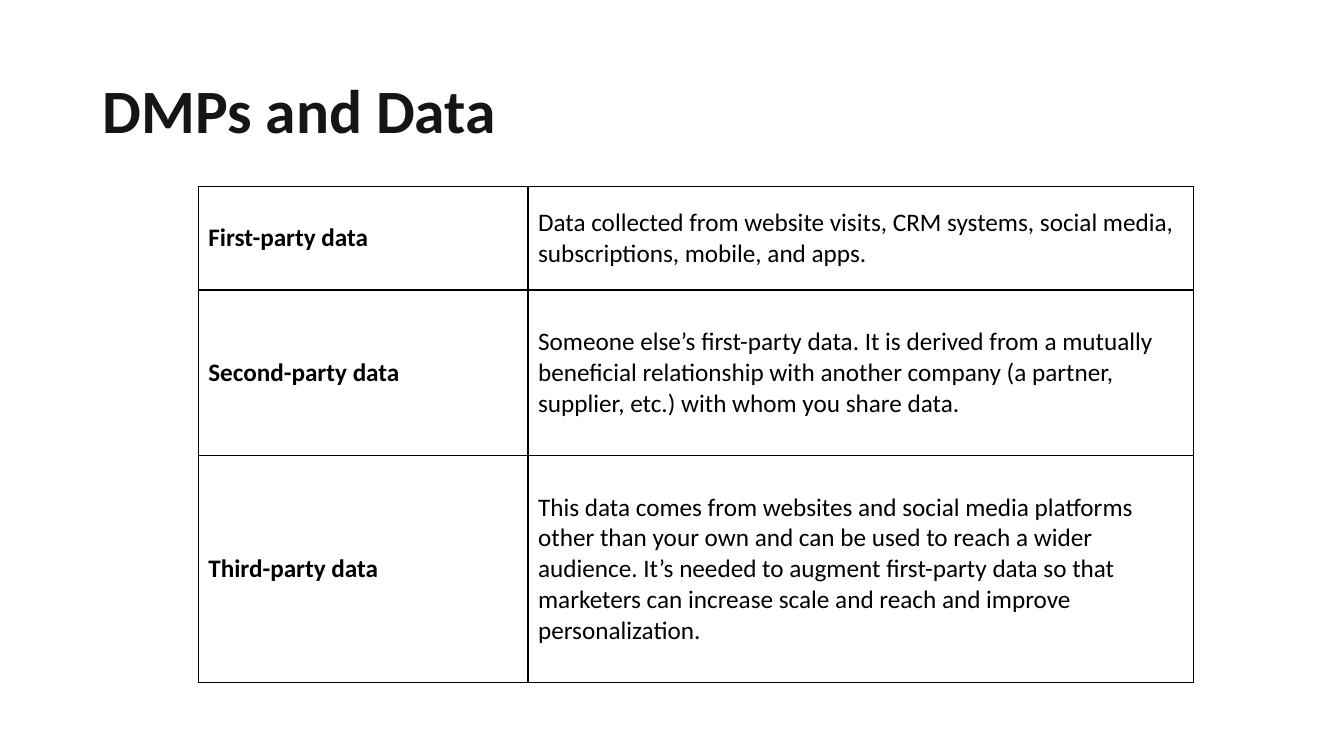
from dataclasses import dataclass

from lxml.etree import SubElement
from pptx import Presentation
from pptx.dml.color import RGBColor
from pptx.enum.text import MSO_ANCHOR as Anchor
from pptx.oxml.ns import qn
from pptx.slide import Slide
from pptx.table import _Cell as Cell
from pptx.text.text import _Paragraph as Paragraph
from pptx.util import Pt


@dataclass(frozen=True)
class Theme:
    font: str = "Calibri"
    title_color: str = "161513"
    body_color: str = "000000"
    border_color: str = "000000"
    title_size: float = 44
    body_size: float = 18
    border_width: float = 1


@dataclass(frozen=True)
class DataKind:
    name: str
    meaning: str
    height: float


THEME = Theme()
PAGE_SIZE = (960, 540)
TITLE_BOX = (66.24, 28.8, 828, 104.4)
TABLE_ORIGIN = (141.6, 133.2)
COLUMN_WIDTHS = (235.6, 475.2)
DATA_KINDS = (
    DataKind(
        "First-party data",
        "Data collected from website visits, CRM systems, social media, "
        "subscriptions, mobile, and apps.",
        74,
    ),
    DataKind(
        "Second-party data",
        "Someone else’s first-party data. It is derived from a mutually beneficial "
        "relationship with another company (a partner, supplier, etc.) with whom "
        "you share data.",
        118,
    ),
    DataKind(
        "Third-party data",
        "This data comes from websites and social media platforms other than your "
        "own and can be used to reach a wider audience. It’s needed to augment "
        "first-party data so that marketers can increase scale and reach and "
        "improve personalization.",
        162.6,
    ),
)


def write(para: Paragraph, text: str, size: float, color: str, bold: bool) -> None:
    para.text = text
    para.font.name = THEME.font
    para.font.size = Pt(size)
    para.font.bold = bold
    para.font.color.rgb = RGBColor.from_string(color)


def add_borders(cell: Cell) -> None:
    properties = cell._tc.get_or_add_tcPr()
    for side in ("lnL", "lnR", "lnT", "lnB"):
        line = SubElement(properties, qn(f"a:{side}"), w=str(Pt(THEME.border_width)))
        fill = SubElement(line, qn("a:solidFill"))
        SubElement(fill, qn("a:srgbClr"), val=THEME.border_color)


def fill_cell(cell: Cell, text: str, bold: bool) -> None:
    add_borders(cell)
    cell.fill.background()
    cell.vertical_anchor = Anchor.MIDDLE
    write(cell.text_frame.paragraphs[0], text, THEME.body_size, THEME.body_color, bold)


def add_title(page: Slide, text: str) -> None:
    box = page.shapes.add_textbox(*map(Pt, TITLE_BOX))
    box.text_frame.word_wrap = True
    box.text_frame.vertical_anchor = Anchor.MIDDLE
    para = box.text_frame.paragraphs[0]
    para.line_spacing = 0.9
    write(para, text, THEME.title_size, THEME.title_color, True)


def add_data_table(page: Slide, kinds: tuple[DataKind, ...]) -> None:
    size = (sum(COLUMN_WIDTHS), sum(kind.height for kind in kinds))
    table = page.shapes.add_table(
        len(kinds), len(COLUMN_WIDTHS), *map(Pt, TABLE_ORIGIN + size)
    ).table
    table.first_row = False
    table.horz_banding = False
    for column, width in zip(table.columns, COLUMN_WIDTHS):
        column.width = Pt(width)
    for row, kind in zip(table.rows, kinds):
        row.height = Pt(kind.height)
        fill_cell(row.cells[0], kind.name, True)
        fill_cell(row.cells[1], kind.meaning, False)


def main() -> None:
    deck = Presentation()
    deck.slide_width, deck.slide_height = map(Pt, PAGE_SIZE)
    page = deck.slides.add_slide(deck.slide_layouts[6])
    add_title(page, "DMPs and Data")
    add_data_table(page, DATA_KINDS)
    deck.save("out.pptx")


if __name__ == "__main__":
    main()
